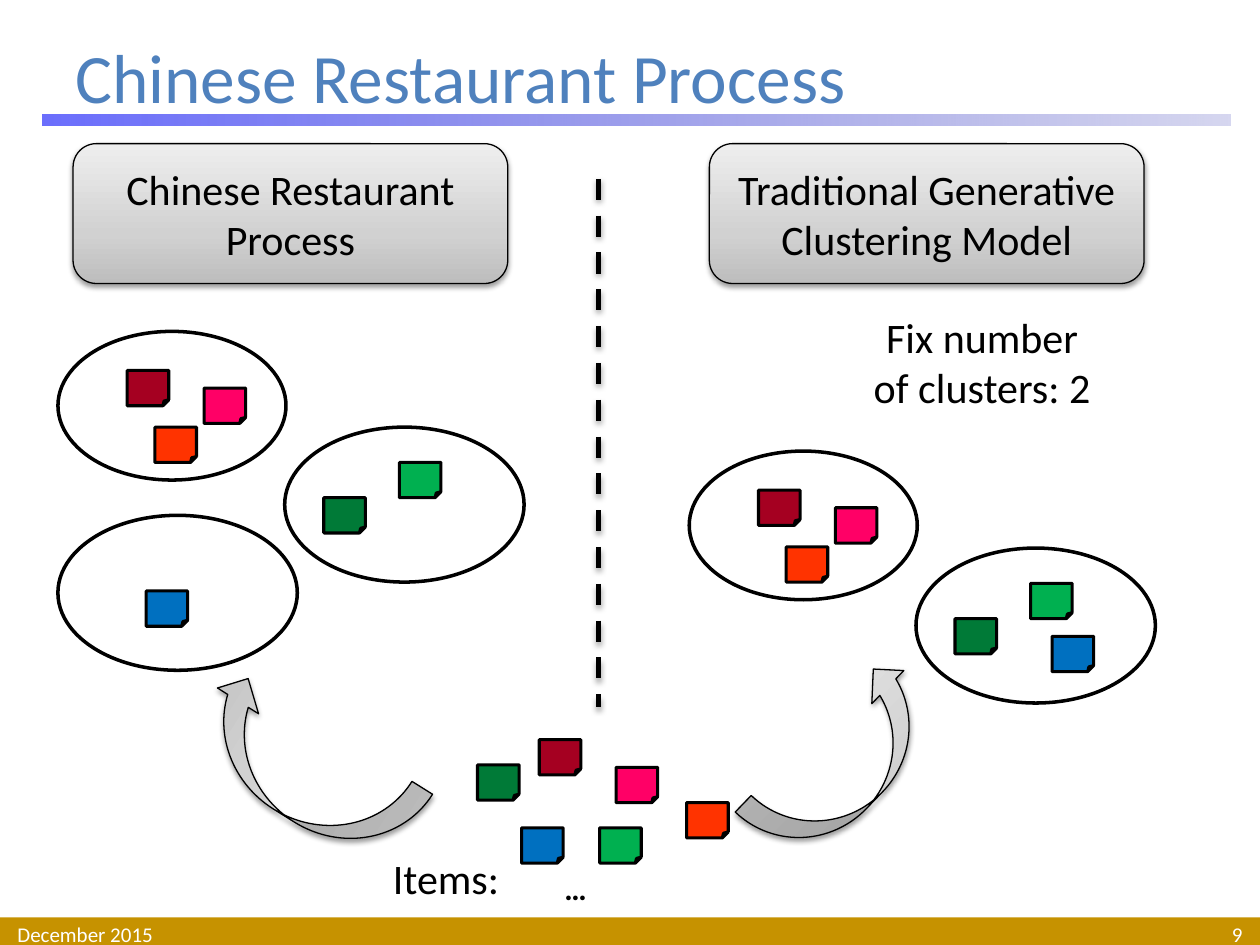
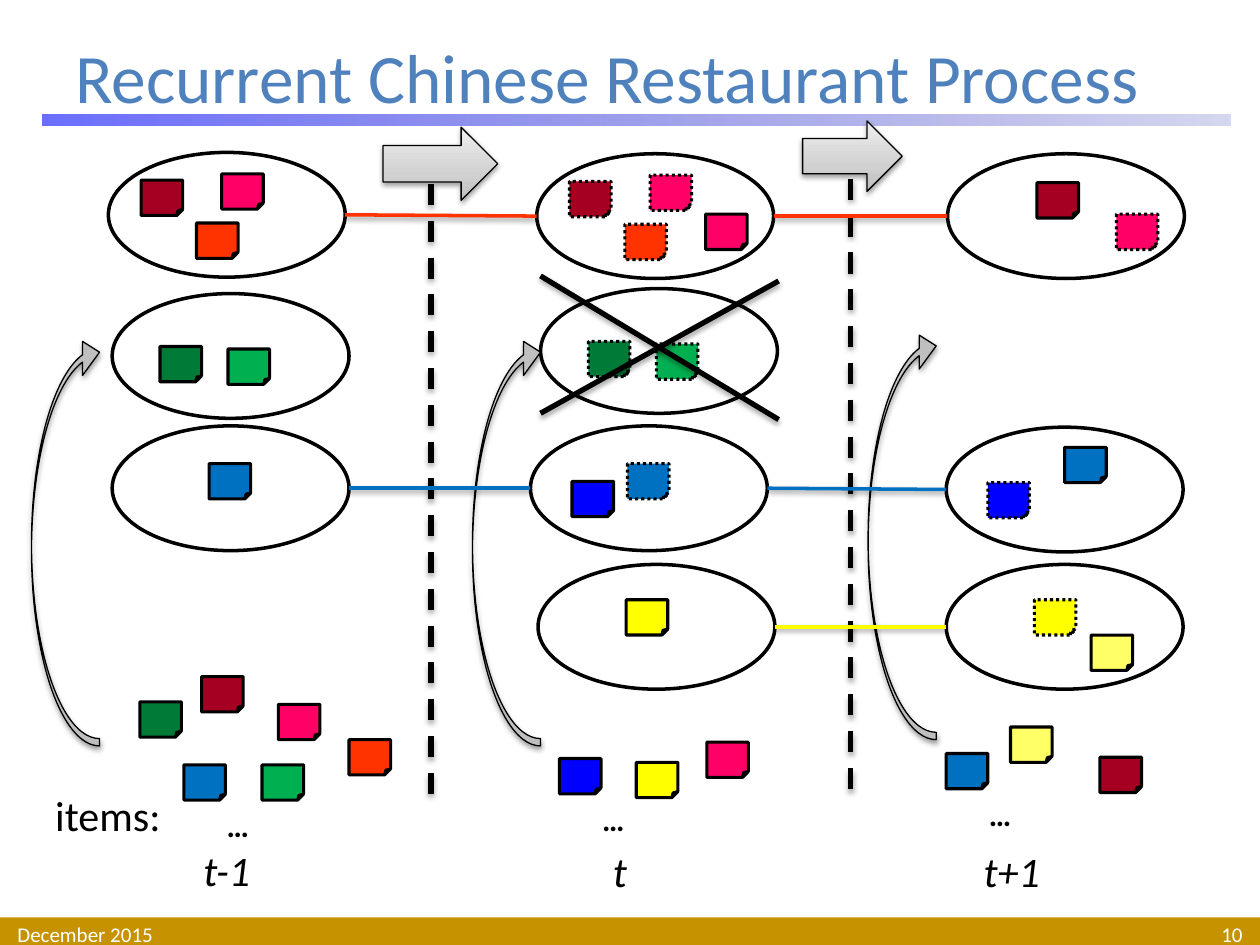
from dataclasses import dataclass
from typing import NamedTuple

from pptx import Presentation
from pptx.dml.color import RGBColor
from pptx.enum.dml import MSO_LINE
from pptx.enum.shapes import MSO_CONNECTOR, MSO_SHAPE
from pptx.enum.text import MSO_ANCHOR, PP_ALIGN
from pptx.oxml import parse_xml
from pptx.oxml.ns import nsdecls, qn
from pptx.util import Inches, Pt

# Shared look
FONT = "Calibri"
BLACK = RGBColor(0x00, 0x00, 0x00)
WHITE = RGBColor(0xFF, 0xFF, 0xFF)
TITLE = RGBColor(0x4F, 0x81, 0xBD)
GOLD = RGBColor(0xC6, 0x92, 0x00)
ORANGE = RGBColor(0xFF, 0x33, 0x00)
PINK = RGBColor(0xFF, 0x00, 0x66)
RED = RGBColor(0xA5, 0x00, 0x21)
GREEN = RGBColor(0x00, 0xB0, 0x50)
PINE = RGBColor(0x00, 0x7A, 0x37)
BLUE = RGBColor(0x00, 0x70, 0xC0)
NAVY = RGBColor(0x00, 0x00, 0xFF)
YELLOW = RGBColor(0xFF, 0xFF, 0x00)
PALE = RGBColor(0xFF, 0xFF, 0x66)


class Stop(NamedTuple):
    pos: int
    colour: RGBColor
    alpha: int = 100


GREY = [Stop(0, RGBColor(0xBD, 0xBD, 0xBD)), Stop(35, RGBColor(0xD1, 0xD1, 0xD1)),
        Stop(100, RGBColor(0xEE, 0xEE, 0xEE))]
VIOLET = [Stop(0, RGBColor(0x46, 0x4A, 0xFC), 80), Stop(100, RGBColor(0x32, 0x35, 0xB4), 20)]


class Box(NamedTuple):
    x: float
    y: float
    w: float
    h: float


class Shade(NamedTuple):
    alpha: int
    dist: float


SOFT = Shade(38, 1.6)
FIRM = Shade(35, 1.8)


class Note(NamedTuple):
    """A folded item, placed relative to its table or pile."""
    x: float
    y: float
    colour: RGBColor
    old: bool = False


@dataclass
class Table:
    """An oval cluster and the items that sit at it."""
    x: float
    y: float
    notes: list[Note]
    w: float = 1.88
    h: float = 0.99

    @property
    def left(self) -> tuple[float, float]:
        return self.x, self.y + self.h / 2

    @property
    def right(self) -> tuple[float, float]:
        return self.x + self.w, self.y + self.h / 2


@dataclass
class Pile:
    """Loose items around an ellipsis."""
    x: float
    y: float
    notes: list[Note]
    label: str = ""


@dataclass
class Arrow:
    kind: MSO_SHAPE
    box: Box
    turn: float = 0
    thin: bool = False


ITEMS = [Note(1.07, -0.48, ORANGE), Note(0.51, -0.76, PINK), Note(-0.1, -0.98, RED),
         Note(0.38, -0.28, GREEN), Note(-0.24, -0.28, BLUE), Note(-0.59, -0.78, PINE)]


# Drawing helpers
def write(frame, words: str, *, size: float = 24, colour=BLACK, bold=False, italic=False,
          align=PP_ALIGN.LEFT, anchor=MSO_ANCHOR.TOP, pad: float = 0.05) -> None:
    frame.word_wrap = True
    frame.vertical_anchor = anchor
    frame.margin_top = frame.margin_bottom = Inches(pad)
    para = frame.paragraphs[0]
    para.alignment = align
    run = para.add_run()
    run.text = words
    font = run.font
    font.name, font.size, font.bold, font.italic = FONT, Pt(size), bold, italic
    font.color.rgb = colour


def text(slide, box: Box, words: str, **style) -> None:
    write(slide.shapes.add_textbox(*map(Inches, box)).text_frame, words, **style)


def blend(shape, stops: list[Stop], angle: int) -> None:
    marks = "".join(
        f'<a:gs pos="{s.pos * 1000}"><a:srgbClr val="{s.colour}">'
        f'<a:alpha val="{s.alpha * 1000}"/></a:srgbClr></a:gs>' for s in stops)
    shape.fill.background()
    props = shape._element.spPr
    props.replace(props.find(qn("a:noFill")), parse_xml(
        f'<a:gradFill rotWithShape="1" {nsdecls("a")}><a:gsLst>{marks}</a:gsLst>'
        f'<a:lin ang="{angle * 60000}" scaled="0"/></a:gradFill>'))


def cast(effects, shade: Shade) -> None:
    effects.append(parse_xml(
        f'<a:outerShdw {nsdecls("a")} blurRad="{Pt(3.1)}" dist="{Pt(shade.dist)}" '
        f'dir="5400000" rotWithShape="0"><a:srgbClr val="{BLACK}">'
        f'<a:alpha val="{shade.alpha * 1000}"/></a:srgbClr></a:outerShdw>'))


def draw(slide, kind: MSO_SHAPE, box: Box, fill=None, edge: float = 0):
    shape = slide.shapes.add_shape(kind, *map(Inches, box))
    shape.shadow.inherit = False
    if fill is not None:
        shape.fill.solid()
        shape.fill.fore_color.rgb = fill
    if edge:
        shape.line.color.rgb = BLACK
        shape.line.width = Pt(edge)
    else:
        shape.line.fill.background()
    return shape


def steel(slide, kind: MSO_SHAPE, box: Box):
    shape = draw(slide, kind, box, edge=0.75)
    blend(shape, GREY, 270)
    cast(shape._element.spPr.find(qn("a:effectLst")), SOFT)
    return shape


def line(slide, start, end, colour=BLACK, width: float = 3, shade=FIRM, dash=None) -> None:
    stroke = slide.shapes.add_connector(MSO_CONNECTOR.STRAIGHT, *map(Inches, (*start, *end)))
    stroke.line.color.rgb = colour
    stroke.line.width = Pt(width)
    if dash:
        stroke.line.dash_style = dash
    effects = parse_xml(f'<a:effectLst {nsdecls("a")}/>')
    stroke._element.spPr.append(effects)
    cast(effects, shade)


def split(slide, x: float, top: float, end: float) -> None:
    line(slide, (x, top), (x, end), dash=MSO_LINE.DASH)


def scatter(slide, x: float, y: float, notes: list[Note]) -> None:
    for note in notes:
        box = Box(x + note.x, y + note.y, 0.33, 0.28)
        shape = draw(slide, MSO_SHAPE.FOLDED_CORNER, box, note.colour, 1.75)
        if note.old:
            shape.line.dash_style = MSO_LINE.ROUND_DOT


def seat(slide, tables: list[Table]) -> None:
    for table in tables:
        draw(slide, MSO_SHAPE.OVAL, Box(table.x, table.y, table.w, table.h), WHITE, 2)
    for table in tables:
        scatter(slide, table.x, table.y, table.notes)


def heap(slide, pile: Pile) -> None:
    scatter(slide, pile.x, pile.y, pile.notes)
    text(slide, Box(pile.x, pile.y, 0.52, 0.4), "…", size=18, bold=True)
    if pile.label:
        text(slide, Box(pile.x - 1.36, pile.y - 0.13, 1.24, 0.5), pile.label)


def point(slide, arrow: Arrow) -> None:
    shape = steel(slide, arrow.kind, arrow.box)
    shape.rotation = arrow.turn
    if arrow.thin:
        for i, value in enumerate((0.108, 0.5, 0.25)):
            shape.adjustments[i] = value


def start(deck, title: str, number: int):
    """Add a slide with title, rule and footer."""
    slide = deck.slides.add_slide(deck.slide_layouts[6])
    draw(slide, MSO_SHAPE.RECTANGLE, Box(0, 7.28, 10, 0.25), GOLD)
    blend(draw(slide, MSO_SHAPE.RECTANGLE, Box(0.34, 0.91, 9.43, 0.09)), VIOLET, 0)
    middle = MSO_ANCHOR.MIDDLE
    text(slide, Box(0.5, 0.3, 9, 0.61), title, size=39.6, colour=TITLE, anchor=middle)
    foot = dict(size=12, colour=WHITE, anchor=middle, pad=0)
    text(slide, Box(0.04, 7.29, 2.33, 0.24), "December 2015", **foot)
    text(slide, Box(7.63, 7.29, 2.33, 0.24), str(number), align=PP_ALIGN.RIGHT, **foot)
    return slide


# Slide 9: two ways to cluster
def compare(deck) -> None:
    slide = start(deck, "Chinese Restaurant Process", 9)
    split(slide, 4.75, 1.42, 5.61)
    for x, words in ((0.58, "Chinese Restaurant Process"),
                     (5.63, "Traditional Generative Clustering Model")):
        head = steel(slide, MSO_SHAPE.ROUNDED_RECTANGLE, Box(x, 1.14, 3.45, 1.11))
        write(head.text_frame, words, align=PP_ALIGN.CENTER, anchor=MSO_ANCHOR.MIDDLE)
    text(slide, Box(6.76, 2.42, 2.07, 0.91), "Fix number of clusters: 2", align=PP_ALIGN.CENTER)

    warm = [Note(0.77, 0.76, ORANGE), Note(1.16, 0.45, PINK), Note(0.55, 0.31, RED)]
    cool = [Note(0.91, 0.28, GREEN), Note(0.31, 0.56, PINE)]
    small, large = dict(w=1.81, h=1.18), dict(w=1.9, h=1.23)
    seat(slide, [
        Table(0.46, 2.63, warm, **small),
        Table(2.26, 3.39, cool, **large),
        Table(0.46, 4.09, [Note(0.7, 0.6, BLUE)], **large),
        Table(5.47, 3.58, warm, **small),
        Table(7.27, 4.35, cool + [Note(1.08, 0.7, BLUE)], **large),
    ])
    heap(slide, Pile(4.38, 6.85, ITEMS, "Items:"))
    point(slide, Arrow(MSO_SHAPE.CURVED_UP_ARROW, Box(5.83, 5.7, 1.76, 0.73), 314))
    point(slide, Arrow(MSO_SHAPE.CURVED_LEFT_ARROW, Box(2.03, 5.16, 0.77, 1.92), 122.1))


# Slide 10: clusters over three time steps
def recur(deck) -> None:
    slide = start(deck, "Recurrent Chinese Restaurant Process", 10)
    split(slide, 3.42, 1.46, 6.3)
    split(slide, 6.75, 1.42, 6.35)

    warm = [Note(0.7, 0.56, ORANGE), Note(0.9, 0.17, PINK), Note(0.26, 0.22, RED)]
    cool = [Note(0.92, 0.44, GREEN), Note(0.38, 0.42, PINE)]
    blue = [Note(0.77, 0.3, BLUE)]

    def age(notes: list[Note]) -> list[Note]:
        return [note._replace(old=True) for note in notes]

    pink, navy, gold = Note(1.34, 0.48, PINK), Note(0.33, 0.44, NAVY), Note(0.7, 0.28, YELLOW)
    warms = [Table(0.86, 1.21, warm), Table(4.26, 1.22, age(warm) + [pink]),
             Table(7.52, 1.22, age([pink]) + [Note(0.71, 0.23, RED)])]
    cools = [Table(0.89, 2.33, cool), Table(4.29, 2.29, age(cool))]
    blues = [Table(0.89, 3.38, blue), Table(4.21, 3.38, age(blue) + [navy]),
             Table(7.51, 3.39, age([navy]) + [Note(0.94, 0.16, BLUE)])]
    golds = [Table(4.27, 4.48, [gold]),
             Table(7.51, 4.48, age([gold]) + [Note(1.15, 0.56, PALE)])]
    seat(slide, warms + cools + blues + golds)

    # Items that arrive at each step
    heap(slide, Pile(1.7, 6.35, ITEMS, "items:"))
    heap(slide, Pile(4.68, 6.3, [Note(0.93, -0.41, PINK), Note(-0.24, -0.28, NAVY),
                                 Note(0.37, -0.25, YELLOW)]))
    heap(slide, Pile(7.75, 6.26, [Note(0.98, -0.25, RED), Note(-0.24, -0.28, BLUE),
                                  Note(0.27, -0.49, PALE)]))
    for x, y, step in ((1.17, 6.65, "t-1"), (4.29, 6.66, "t"), (7.4, 6.66, "t+1")):
        text(slide, Box(x, y, 1.26, 0.5), step, italic=True, align=PP_ALIGN.CENTER)

    # Arrows between and within steps
    for box in (Box(3.04, 1.01, 0.91, 0.58), Box(6.37, 0.96, 0.79, 0.56)):
        point(slide, Arrow(MSO_SHAPE.RIGHT_ARROW, box))
    for x, y in ((0.25, 2.66), (3.75, 2.66), (6.89, 2.61)):
        point(slide, Arrow(MSO_SHAPE.CURVED_LEFT_ARROW, Box(x, y, 0.54, 3.26), 180, True))

    # Cross on the cluster that dies out
    line(slide, (4.29, 2.19), (6.18, 3.33))
    line(slide, (6.18, 2.23), (4.29, 3.28))

    # Links between clusters that live on
    for chain, colour in ((warms, ORANGE), (golds, YELLOW), (blues, BLUE)):
        for a, b in zip(chain, chain[1:]):
            line(slide, a.right, b.left, colour, 2, SOFT)


def main() -> None:
    deck = Presentation()
    deck.slide_width, deck.slide_height = Inches(10), Inches(7.5)
    compare(deck)
    recur(deck)
    deck.save("out.pptx")


if __name__ == "__main__":
    main()
